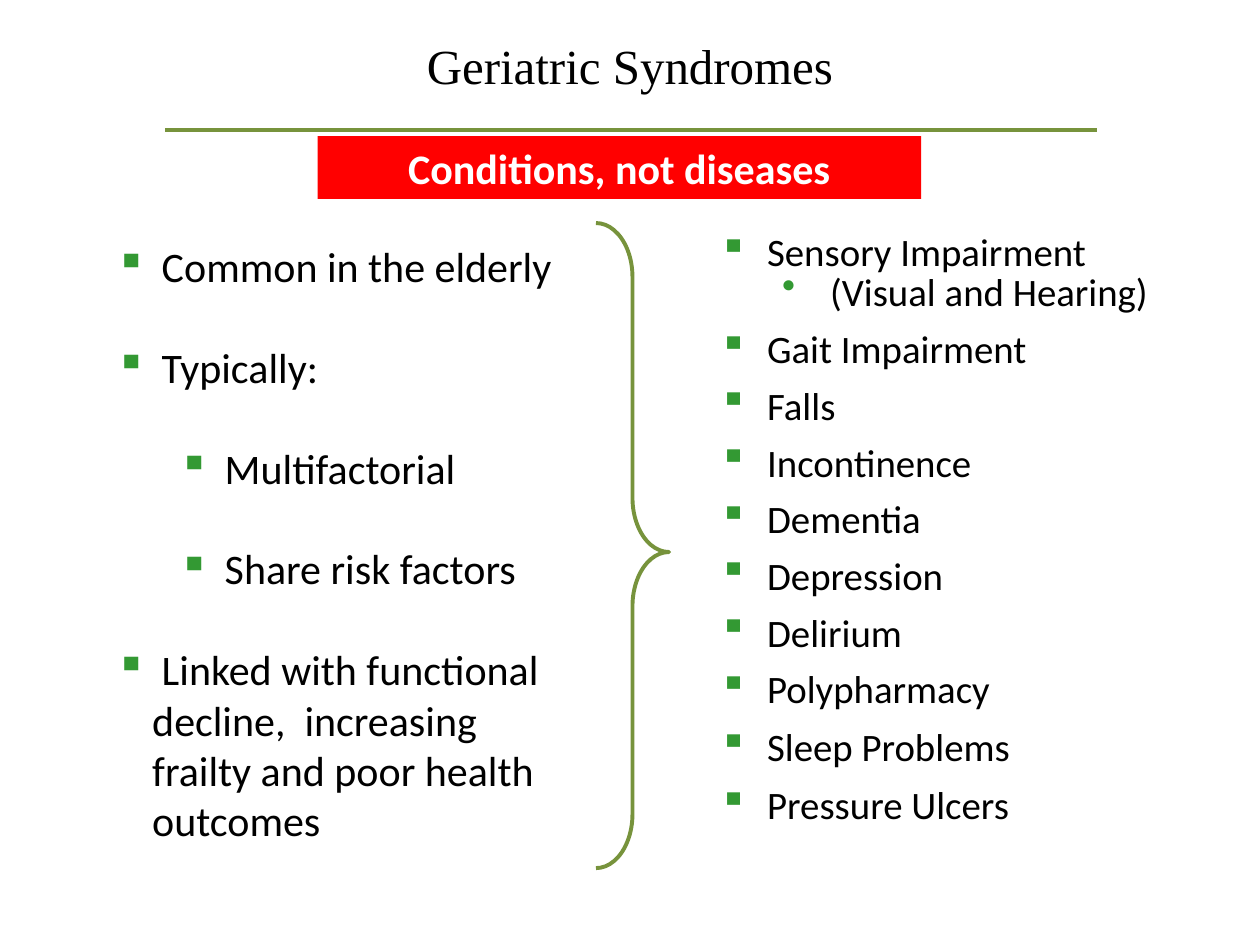
import pptx
import pptx.dml.color
import pptx.enum.shapes
import pptx.enum.text
import pptx.oxml
import pptx.oxml.ns
import pptx.util
from pptx.util import Inches

COLORS = {
    "text": "000000",
    "white": "FFFFFF",
    "banner": "FF0000",
    "olive": "77933C",
    "bullet": "339933",
}
LINE_WIDTH = 2.25
FEATURES = [
    (" Common in the elderly", 0),
    (" Typically:", 0),
    (" Multifactorial", 1),
    (" Share risk factors", 1),
    (" Linked with functional decline,  increasing frailty and poor health outcomes", 0),
]
SYNDROMES = [
    ("Sensory Impairment", 0, 4.4),
    ("(Visual and Hearing)", 1, 4.4),
    *[(name, 0, 13.75) for name in (
        "Gait Impairment", "Falls", "Incontinence", "Dementia",
        "Depression", "Delirium", "Polypharmacy")],
    ("Sleep Problems", 0, 14.5),
    ("Pressure Ulcers", 0, 14.5),
]


def rgb(name):
    return pptx.dml.color.RGBColor.from_string(COLORS[name])


def add_run(paragraph, text, size, color="text", font="Calibri", bold=False):
    run = paragraph.add_run()
    run.text = text
    run.font.size = pptx.util.Pt(size)
    run.font.name = font
    run.font.bold = bold
    run.font.color.rgb = rgb(color)


def add_text_area(slide, left, top, width, height, grow=True):
    frame = slide.shapes.add_textbox(
        Inches(left), Inches(top), Inches(width), Inches(height)).text_frame
    frame.word_wrap = True
    if grow:
        frame.auto_size = pptx.enum.text.MSO_AUTO_SIZE.SHAPE_TO_FIT_TEXT
    return frame


def add_bullet(paragraph, symbol, level, hanging):
    paragraph.level = level
    properties = paragraph._p.get_or_add_pPr()
    properties.set("marL", str(Inches(hanging + 0.5 * level)))
    properties.set("indent", str(-Inches(hanging)))
    namespace = pptx.oxml.ns.nsdecls("a")
    for xml in (
        f'<a:buClr {namespace}><a:srgbClr val="{COLORS["bullet"]}"/></a:buClr>',
        f'<a:buChar {namespace} char="{symbol}"/>',
    ):
        properties.append(pptx.oxml.parse_xml(xml))


def add_item(frame, index, text, level, size, hanging, gap, symbol="▪", spacing=None):
    paragraph = frame.add_paragraph() if index else frame.paragraphs[0]
    paragraph.space_before = pptx.util.Pt(gap)
    if spacing:
        paragraph.line_spacing = spacing
    add_bullet(paragraph, symbol, level, hanging)
    add_run(paragraph, text, size)


def add_title(slide):
    paragraph = add_text_area(slide, 0, 0.23, 10, 0.57).paragraphs[0]
    paragraph.alignment = pptx.enum.text.PP_ALIGN.CENTER
    add_run(paragraph, "Geriatric Syndromes", 28, font="Times New Roman")


def add_rule(slide):
    rule = slide.shapes.add_connector(
        pptx.enum.shapes.MSO_CONNECTOR.STRAIGHT,
        Inches(1.31), Inches(1.03), Inches(8.71), Inches(1.03))
    rule.line.color.rgb = rgb("olive")
    rule.line.width = pptx.util.Pt(LINE_WIDTH)
    rule._element.spPr.append(
        pptx.oxml.parse_xml(f'<a:effectLst {pptx.oxml.ns.nsdecls("a")}/>'))


def add_banner(slide):
    banner = slide.shapes.add_shape(
        pptx.enum.shapes.MSO_SHAPE.RECTANGLE,
        Inches(2.52), Inches(1.08), Inches(4.79), Inches(0.5))
    banner.shadow.inherit = False
    banner.fill.solid()
    banner.fill.fore_color.rgb = rgb("banner")
    banner.line.fill.background()
    paragraph = banner.text_frame.paragraphs[0]
    paragraph.alignment = pptx.enum.text.PP_ALIGN.CENTER
    add_run(paragraph, "Conditions, not diseases", 24, "white", bold=True)


def add_brace(slide):
    brace = slide.shapes.add_shape(
        pptx.enum.shapes.MSO_SHAPE.RIGHT_BRACE,
        Inches(4.73), Inches(1.77), Inches(0.58), Inches(5.12))
    brace.shadow.inherit = False
    brace.adjustments[0] = 0.74
    brace.adjustments[1] = 0.51
    brace.fill.background()
    brace.line.color.rgb = rgb("olive")
    brace.line.width = pptx.util.Pt(LINE_WIDTH)


def add_features(slide):
    frame = add_text_area(slide, 0.82, 1.86, 3.8, 4.95)
    for index, (text, level) in enumerate(FEATURES):
        add_item(frame, index, text, level, 24, 0.29, 28.8 if index else 0)


def add_syndromes(slide):
    frame = add_text_area(slide, 5.61, 1.86, 3.69, 5.13, grow=False)
    for index, (text, level, gap) in enumerate(SYNDROMES):
        add_item(frame, index, text, level, 22.2, 0.38, gap,
                 symbol="•" if level else "▪", spacing=0.7)


def main():
    """Build the geriatric syndromes slide."""
    deck = pptx.Presentation()
    deck.slide_width = Inches(10)
    deck.slide_height = Inches(7.5)
    slide = deck.slides.add_slide(deck.slide_layouts[6])
    add_features(slide)
    add_rule(slide)
    add_title(slide)
    add_banner(slide)
    add_syndromes(slide)
    add_brace(slide)
    deck.save("out.pptx")


if __name__ == "__main__":
    main()
